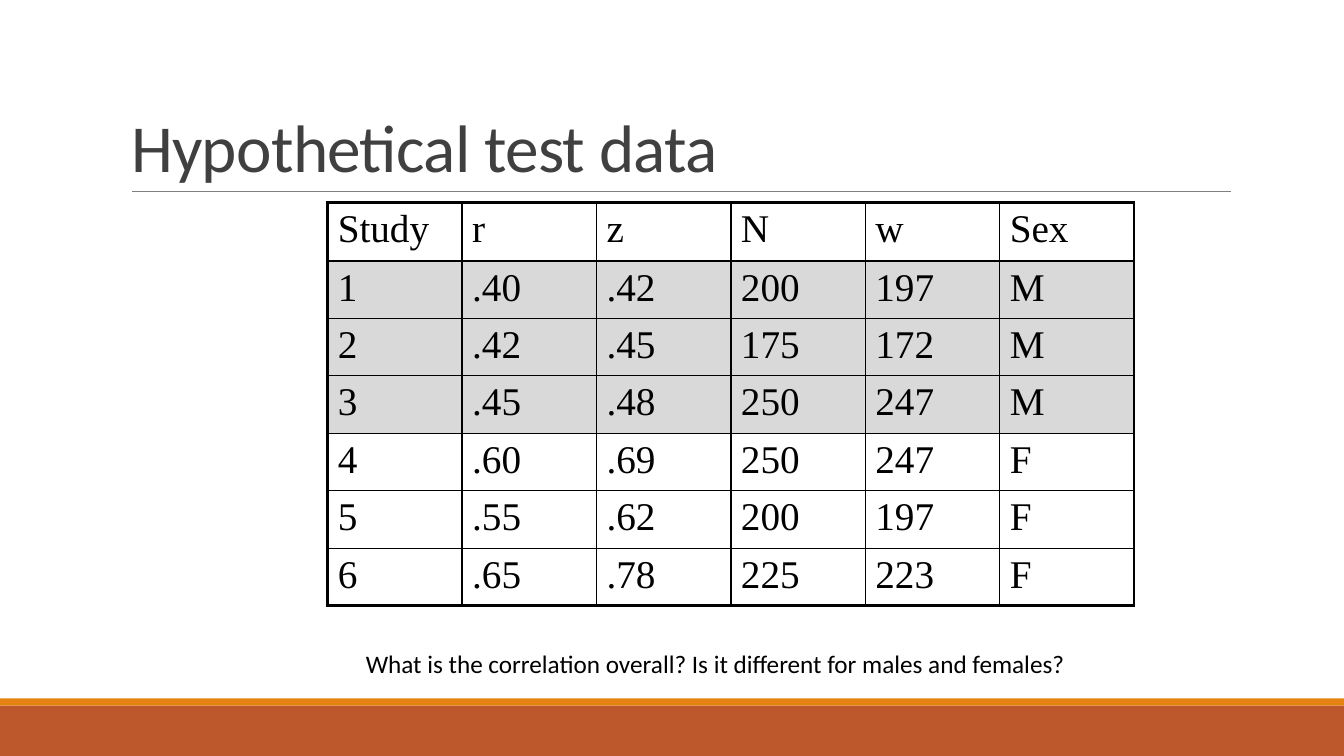
from typing import NamedTuple

from lxml import etree
from pptx import Presentation
from pptx.dml.color import RGBColor
from pptx.enum import shapes, text
from pptx.oxml import ns
from pptx.util import Inches, Pt

BLACK = RGBColor(0x00, 0x00, 0x00)
DARK = RGBColor(0x40, 0x40, 0x40)
GRAY = RGBColor(0x80, 0x80, 0x80)
SHADE = RGBColor(0xD9, 0xD9, 0xD9)
RUST = RGBColor(0xBD, 0x58, 0x2C)
GOLD = RGBColor(0xE4, 0x83, 0x12)

THICK, THIN = 2.25, 1


class Band(NamedTuple):
    top: float
    height: float
    color: RGBColor


class Study(NamedTuple):
    study: str
    r: str
    z: str
    n: str
    w: str
    sex: str


BANDS = [Band(7, 0.5, RUST), Band(6.93, 0.07, GOLD)]
ROWS = [
    Study("Study", "r", "z", "N", "w", "Sex"),
    Study("1", ".40", ".42", "200", "197", "M"),
    Study("2", ".42", ".45", "175", "172", "M"),
    Study("3", ".45", ".48", "250", "247", "M"),
    Study("4", ".60", ".69", "250", "247", "F"),
    Study("5", ".55", ".62", "200", "197", "F"),
    Study("6", ".65", ".78", "225", "223", "F"),
]


def style(para, name: str, size: float, color: RGBColor) -> None:
    for run in para.runs:
        run.font.name = name
        run.font.size = Pt(size)
        run.font.color.rgb = color


def add_band(slide, band: Band) -> None:
    bar = slide.shapes.add_shape(
        shapes.MSO_SHAPE.RECTANGLE, 0, Inches(band.top),
        Inches(13.33), Inches(band.height))
    bar.shadow.inherit = False
    bar.fill.solid()
    bar.fill.fore_color.rgb = band.color
    bar.line.fill.background()


def add_rule(slide) -> None:
    rule = slide.shapes.add_connector(
        shapes.MSO_CONNECTOR.STRAIGHT,
        Inches(1.31), Inches(1.9), Inches(12.21), Inches(1.9))
    rule.line.color.rgb = GRAY
    rule.line.width = Pt(0.5)
    etree.SubElement(rule.element.spPr, ns.qn("a:effectLst"))


def set_title(slide) -> None:
    title = slide.shapes.title
    title.left, title.top = Inches(1.2), Inches(0.31)
    title.width, title.height = Inches(11), Inches(1.59)
    frame = title.text_frame
    frame.text = "Hypothetical test data"
    frame.word_wrap = True
    frame.auto_size = text.MSO_AUTO_SIZE.NONE
    frame.vertical_anchor = text.MSO_ANCHOR.BOTTOM
    para = frame.paragraphs[0]
    para.alignment = text.PP_ALIGN.LEFT
    para.line_spacing = 0.85
    style(para, "Calibri", 48, DARK)
    para.runs[0].font._element.set("spc", "-50")


def set_edge(cell, side: str, width: float) -> None:
    props = cell._tc.get_or_add_tcPr()
    edge = etree.SubElement(props, ns.qn(f"a:ln{side}"), w=str(Pt(width)))
    fill = etree.SubElement(edge, ns.qn("a:solidFill"))
    etree.SubElement(fill, ns.qn("a:srgbClr"), val=str(BLACK))


def add_grid(slide) -> None:
    rows, cols = len(ROWS), len(Study._fields)
    table = slide.shapes.add_table(
        rows, cols, Inches(3.25), Inches(2.01), Inches(8), Inches(3.98)).table
    table.first_row = False
    table.horz_banding = False
    for i, row in enumerate(ROWS):
        table.rows[i].height = Inches(0.57 if i else 0.58)
        for j, value in enumerate(row):
            cell = table.cell(i, j)
            cell.text = value
            style(cell.text_frame.paragraphs[0], "Times New Roman", 28, BLACK)
            # Thick frame, thin inner lines
            outer = {"L": j == 0, "R": j == cols - 1,
                     "T": i == 0, "B": i == rows - 1}
            for side, thick in outer.items():
                set_edge(cell, side, THICK if thick else THIN)
            # Male studies are shaded
            if row.sex == "M":
                cell.fill.solid()
                cell.fill.fore_color.rgb = SHADE
            else:
                cell.fill.background()


def add_query(slide) -> None:
    box = slide.shapes.add_textbox(
        Inches(3.53), Inches(6.38), Inches(7.43), Inches(0.4))
    frame = box.text_frame
    frame.word_wrap = True
    frame.auto_size = text.MSO_AUTO_SIZE.SHAPE_TO_FIT_TEXT
    frame.text = ("What is the correlation overall? "
                  "Is it different for males and females?")
    style(frame.paragraphs[0], "Calibri", 18, BLACK)


def main() -> None:
    deck = Presentation()
    deck.slide_width, deck.slide_height = Inches(13.33), Inches(7.5)
    slide = deck.slides.add_slide(deck.slide_layouts[5])

    # Footer bands and title rule
    for band in BANDS:
        add_band(slide, band)
    add_rule(slide)

    # Title, data and question
    set_title(slide)
    add_grid(slide)
    add_query(slide)
    deck.save("out.pptx")


if __name__ == "__main__":
    main()
